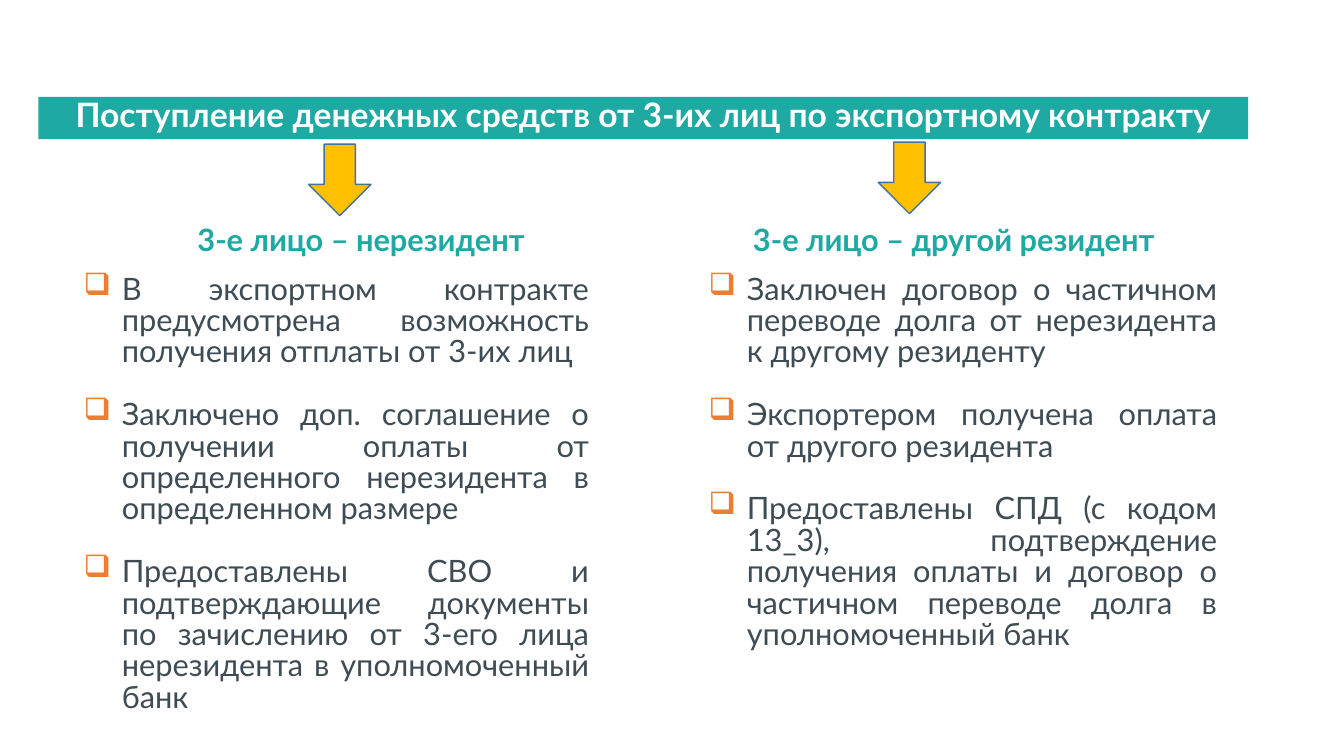
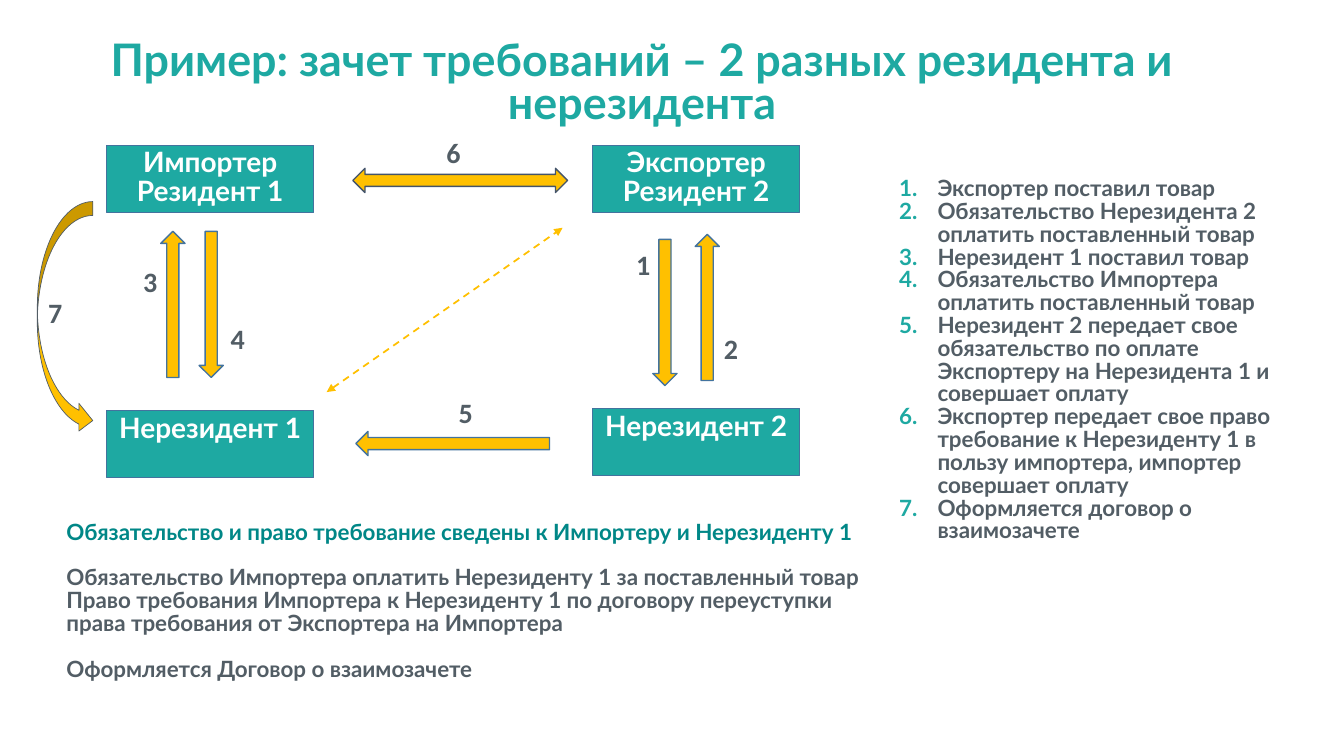
from dataclasses import dataclass

from lxml import etree
from pptx import Presentation
from pptx.dml.color import RGBColor
from pptx.enum.dml import MSO_LINE
from pptx.enum.shapes import MSO_CONNECTOR, MSO_SHAPE
from pptx.enum.text import MSO_ANCHOR, PP_ALIGN
from pptx.oxml.ns import qn
from pptx.util import Inches, Pt

RECT = MSO_SHAPE.RECTANGLE
DOWN_ARROW = MSO_SHAPE.DOWN_ARROW
RIGHT_ARROW = MSO_SHAPE.RIGHT_ARROW
TWO_WAY_ARROW = MSO_SHAPE.LEFT_RIGHT_ARROW
CURVED_ARROW = MSO_SHAPE.CURVED_RIGHT_ARROW
STRAIGHT = MSO_CONNECTOR.STRAIGHT
DASH = MSO_LINE.DASH
TOP = MSO_ANCHOR.TOP
LEFT, CENTER, JUSTIFY = PP_ALIGN.LEFT, PP_ALIGN.CENTER, PP_ALIGN.JUSTIFY


@dataclass(frozen=True)
class Theme:
    teal: str = "1EA9A2"
    deep_teal: str = "008787"
    white: str = "FFFFFF"
    amber: str = "FFC000"
    orange: str = "ED7D31"
    outline: str = "43739E"
    slate: str = "44546A"
    body: str = "3F4C54"
    grey: str = "525D65"
    font: str = "Lato"
    digit_font: str = "Calibri"
    title: int = 32
    band: int = 24
    text: int = 22
    node: int = 20
    note: int = 16
    tight: float = 0.8
    leading: float = 0.85
    indent: float = 0.38


@dataclass(frozen=True)
class Box:
    left: float
    top: float
    width: float
    height: float

    def inner(self, x, y, width, height):
        return Box(self.left + x, self.top + y, width, height)

    def inches(self):
        return [Inches(v) for v in (self.left, self.top, self.width, self.height)]


THEME = Theme()

BAND_TITLE = "Поступление денежных средств от 3-их лиц по экспортному контракту"
NONRESIDENT_STEPS = [
    "В экспортном контракте предусмотрена возможность получения отплаты от 3-их лиц",
    "Заключено доп. соглашение о получении оплаты от определенного нерезидента "
    "в определенном размере",
    "Предоставлены СВО и подтверждающие документы по зачислению от 3-его лица "
    "нерезидента в уполномоченный банк",
]
RESIDENT_STEPS = [
    "Заключен договор о частичном переводе долга от нерезидента к другому резиденту",
    "Экспортером получена оплата от другого резидента",
    "Предоставлены СПД (с кодом 13_3), подтверждение получения оплаты и договор "
    "о частичном переводе долга в уполномоченный банк",
]
EXAMPLE_TITLE = "Пример: зачет требований – 2 разных резидента и нерезидента"
OFFSET_STEPS = [
    "Экспортер поставил товар",
    "Обязательство Нерезидента 2 оплатить поставленный товар",
    "Нерезидент 1 поставил товар",
    "Обязательство Импортера оплатить поставленный товар",
    "Нерезидент 2 передает свое обязательство по оплате Экспортеру на "
    "Нерезидента 1 и совершает оплату",
    "Экспортер передает свое право требование к Нерезиденту 1 в пользу "
    "импортера, импортер совершает оплату",
    "Оформляется договор о взаимозачете",
]
CONCLUSIONS = [
    "Обязательство и право требование сведены к Импортеру и Нерезиденту 1",
    "Обязательство Импортера оплатить Нерезиденту 1 за поставленный товар",
    "Право требования Импортера к Нерезиденту 1 по договору переуступки права "
    "требования от Экспортера на Импортера",
    "Оформляется Договор о взаимозачете",
]


def rgb(code):
    return RGBColor.from_string(code)


def add_bullet(paragraph, color, kind, **attributes):
    """Hang the paragraph behind a coloured mark (buChar or buAutoNum)."""
    props = paragraph._p.get_or_add_pPr()
    props.set("marL", str(Inches(THEME.indent)))
    props.set("indent", str(-Inches(THEME.indent)))
    tint = etree.SubElement(props, qn("a:buClr"))
    etree.SubElement(tint, qn("a:srgbClr"), val=color)
    etree.SubElement(props, qn(kind), **attributes)


def write(frame, lines, size, color, bold=True, align=LEFT, font=THEME.font,
          leading=THEME.leading, gaps=(), bullet=None):
    """Fill the frame; gaps holds the indexes of lines followed by a line's space."""
    frame.word_wrap = True
    frame.vertical_anchor = TOP
    for index, line in enumerate(lines):
        paragraph = frame.paragraphs[0] if index == 0 else frame.add_paragraph()
        paragraph.text = line
        if bullet:
            add_bullet(paragraph, **bullet)
        paragraph.alignment = align
        paragraph.line_spacing = leading
        if index in gaps:
            paragraph.space_after = Pt(round(size * 1.2 * leading, 1))
        for run in paragraph.runs:
            run.font.name = font
            run.font.size = Pt(size)
            run.font.bold = bold
            run.font.color.rgb = rgb(color)


def add_text(slide, box, lines, size, color, **style):
    frame = slide.shapes.add_textbox(*box.inches()).text_frame
    write(frame, lines, size, color, **style)
    return frame


def add_block(slide, kind, box, fill, line=None, weight=1.0, turn=0):
    shape = slide.shapes.add_shape(kind, *box.inches())
    shape.shadow.inherit = False
    shape.fill.solid()
    shape.fill.fore_color.rgb = rgb(fill)
    if line:
        shape.line.color.rgb = rgb(line)
        shape.line.width = Pt(weight)
    else:
        shape.line.fill.background()
    shape.rotation = turn
    return shape


def add_dashed_link(slide, start, end):
    link = slide.shapes.add_connector(STRAIGHT, *[Inches(v) for v in (*start, *end)])
    link.line.color.rgb = rgb(THEME.amber)
    link.line.width = Pt(1.25)
    link.line.dash_style = DASH
    outline = link._element.spPr.find(qn("a:ln"))
    for tip in ("a:headEnd", "a:tailEnd"):
        etree.SubElement(outline, qn(tip), type="triangle")
    etree.SubElement(link._element.spPr, qn("a:effectLst"))


def add_case_column(slide, box, arrow, heading_x, heading, steps):
    """One case: arrow from the band, heading and checklist."""
    add_block(slide, DOWN_ARROW, box.inner(*arrow, 0.62, 0.71), THEME.amber, THEME.outline)
    add_text(slide, box.inner(heading_x, 0.79, box.width - heading_x, 0.42),
             [heading], THEME.text, THEME.teal, align=JUSTIFY)
    add_text(slide, box.inner(0, 1.27, box.width, box.height - 1.27), steps,
             THEME.text, THEME.body, bold=False, align=JUSTIFY,
             gaps=range(len(steps) - 1),
             bullet=dict(color=THEME.orange, kind="a:buChar", char="❑"))


def build_cases_slide(slide):
    band = add_block(slide, RECT, Box(0.38, 0.96, 12, 0.42), THEME.teal)
    write(band.text_frame, [BAND_TITLE], THEME.band, THEME.white,
          align=CENTER, leading=THEME.tight)
    add_case_column(slide, Box(0.73, 1.41, 5.21, 5.78), (2.33, 0.02), 1.13,
                    "3-е лицо – нерезидент", NONRESIDENT_STEPS)
    add_case_column(slide, Box(6.93, 1.41, 5.24, 5.49), (1.78, 0), 0.44,
                    "3-е лицо – другой резидент", RESIDENT_STEPS)


def add_diagram(slide, box):
    """Four parties joined by seven numbered flows."""
    parties = [
        (0.69, 0.14, "Импортер Резидент 1"),
        (5.51, 0.14, "Экспортер Резидент 2"),
        (0.69, 2.77, "Нерезидент 1"),
        (5.51, 2.75, "Нерезидент 2"),
    ]
    for x, y, name in parties:
        party = add_block(slide, RECT, box.inner(x, y, 2.05, 0.67),
                          THEME.teal, THEME.outline, 0.75)
        write(party.text_frame, [name], THEME.node, THEME.white, align=CENTER)

    # number, number place, arrow kind, arrow place, size, turn, outline, weight
    straight = (1.45, 0.24)
    edge = (THEME.outline, 1)
    flows = [
        ("1", (5.84, 1.11), RIGHT_ARROW, (5.5, 1.68), straight, 90, *edge),
        ("2", (6.71, 1.94), RIGHT_ARROW, (5.92, 1.63), straight, 270, *edge),
        ("3", (0.95, 1.28), RIGHT_ARROW, (0.62, 1.6), straight, 270, *edge),
        ("4", (1.82, 1.84), RIGHT_ARROW, (1, 1.6), straight, 90, *edge),
        ("5", (4.08, 2.57), RIGHT_ARROW, (3.16, 2.98), (1.92, 0.24), 180, *edge),
        ("6", (3.96, 0), TWO_WAY_ARROW, (3.13, 0.37), (2.13, 0.24), 0, THEME.slate, 1),
        ("7", (0.01, 1.58), CURVED_ARROW, (0, 0.7), (0.55, 2.31), 0, THEME.grey, 0.5),
    ]
    for number, label_at, kind, place, size, turn, line, weight in flows:
        add_block(slide, kind, box.inner(*place, *size), THEME.amber, line, weight, turn)
        label = add_text(slide, box.inner(*label_at, 0.32, 0.44), [number], THEME.node,
                         THEME.grey, font=THEME.digit_font, leading=1.0)
        label.word_wrap = False

    add_dashed_link(slide, (box.left + 2.87, box.top + 2.59),
                    (box.left + 5.21, box.top + 0.96))


def add_conclusions(slide, box):
    frame = add_text(slide, box, CONCLUSIONS, THEME.note, THEME.grey, gaps=(0, 2))
    frame.paragraphs[0].runs[0].font.color.rgb = rgb(THEME.deep_teal)


def build_example_slide(slide):
    add_text(slide, Box(0.37, 0.37, 12, 0.96), [EXAMPLE_TITLE], THEME.title,
             THEME.teal, align=CENTER, leading=THEME.tight)
    add_diagram(slide, Box(0.37, 1.3, 7.56, 3.44))
    add_text(slide, Box(8.82, 1.72, 4.35, 3.99), OFFSET_STEPS, THEME.note, THEME.grey,
             bullet=dict(color=THEME.teal, kind="a:buAutoNum", type="arabicPeriod"))
    add_conclusions(slide, Box(0.56, 5.13, 8.41, 1.93))


def main():
    deck = Presentation()
    deck.slide_width, deck.slide_height = Inches(13.33), Inches(7.5)
    blank = deck.slide_layouts[6]
    for build in (build_cases_slide, build_example_slide):
        build(deck.slides.add_slide(blank))
    deck.save("out.pptx")


if __name__ == "__main__":
    main()
